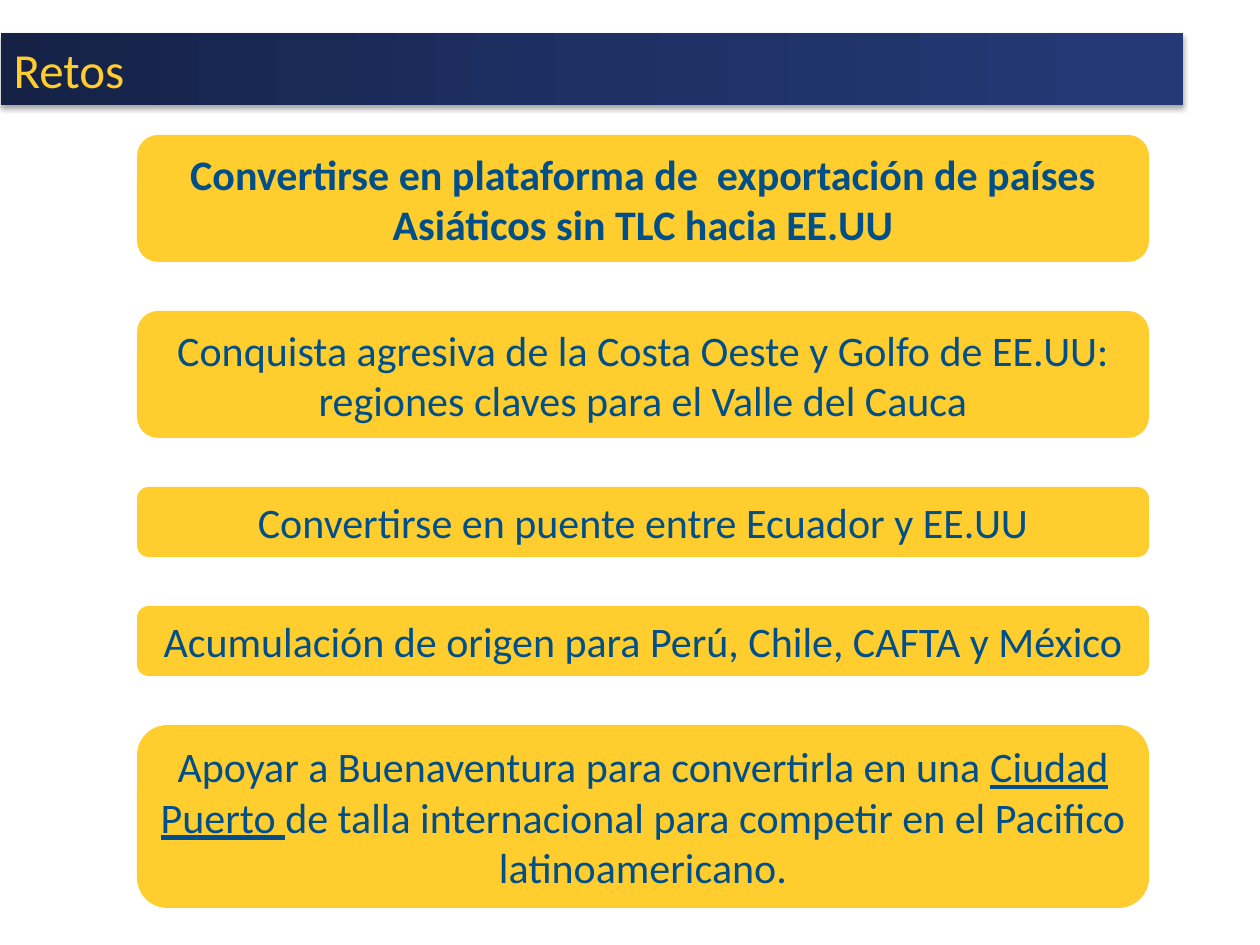
from copy import deepcopy
from dataclasses import dataclass

from lxml import etree
from pptx import Presentation
from pptx.dml.color import RGBColor
from pptx.enum.shapes import MSO_SHAPE
from pptx.enum.text import MSO_ANCHOR, MSO_AUTO_SIZE, PP_ALIGN
from pptx.oxml.ns import qn
from pptx.util import Emu, Pt

ROUNDED = MSO_SHAPE.ROUNDED_RECTANGLE
MIDDLE = MSO_ANCHOR.MIDDLE
NO_FIT, GROW = MSO_AUTO_SIZE.NONE, MSO_AUTO_SIZE.SHAPE_TO_FIT_TEXT
LEFT, CENTER = PP_ALIGN.LEFT, PP_ALIGN.CENTER
TITLE_ONLY = 5
PX = 914400 / 126


@dataclass(frozen=True)
class Theme:
    font: str = "Calibri"
    yellow: str = "FFCD2D"
    blue: str = "004F89"
    band: tuple = ("152246", "1E3064", "243976")
    shadow: str = "000000"
    title_size: int = 28
    body_size: int = 24


THEME = Theme()

# Each challenge: height in px, bold, and its (text, underlined) spans
CHALLENGES = [
    (127, True, [("Convertirse en plataforma de  exportación de países "
                  "Asiáticos sin TLC hacia EE.UU", False)]),
    (127, False, [("Conquista agresiva de la Costa Oeste y Golfo de EE.UU: "
                   "regiones claves para el Valle del Cauca", False)]),
    (70, False, [("Convertirse en puente entre Ecuador y EE.UU", False)]),
    (70, False, [("Acumulación de origen para Perú, Chile, CAFTA y México", False)]),
    (183, False, [("Apoyar a Buenaventura para convertirla en una ", False),
                  ("Ciudad Puerto ", True),
                  ("de talla internacional para competir en el Pacifico "
                   "latinoamericano.", False)]),
]


def px(length):
    return Emu(round(length * PX))


def add_span(para, text, size, color, bold=False, underline=False):
    span = para.add_run()
    span.text = text
    font = span.font
    font.name, font.size = THEME.font, Pt(size)
    font.bold, font.underline = bold, underline
    font.color.rgb = RGBColor.from_string(color)


def fill_gradient(shape, colors):
    """Fill from left to right with three evenly spaced colours."""
    shape.fill.gradient()
    shape.fill.gradient_angle = 0
    first = shape.element.spPr.find(".//" + qn("a:gs"))
    first.addnext(deepcopy(first))
    for index, (stop, color) in enumerate(zip(shape.fill.gradient_stops, colors)):
        stop.position = index / 2
        stop.color.rgb = RGBColor.from_string(color)


def add_drop_shadow(shape):
    effects = etree.SubElement(shape.element.spPr, qn("a:effectLst"))
    shadow = etree.SubElement(effects, qn("a:outerShdw"), blurRad=str(Pt(3)),
                              dist=str(Pt(2)), dir="5400000", rotWithShape="0")
    color = etree.SubElement(shadow, qn("a:srgbClr"), val=THEME.shadow)
    etree.SubElement(color, qn("a:alpha"), val="35000")


def place_title(page, left, top, width, height, text):
    band = page.shapes.title
    band.left, band.top, band.width, band.height = map(px, (left, top, width, height))
    fill_gradient(band, THEME.band)
    band.line.fill.background()
    add_drop_shadow(band)
    frame = band.text_frame
    frame.auto_size, frame.vertical_anchor = NO_FIT, MIDDLE
    para = frame.paragraphs[0]
    para.alignment = LEFT
    add_span(para, text, THEME.title_size, THEME.yellow)


def add_challenge(page, left, top, width, height, bold, spans):
    box = page.shapes.add_shape(ROUNDED, *map(px, (left, top, width, height)))
    box.shadow.inherit = False
    box.fill.solid()
    box.fill.fore_color.rgb = RGBColor.from_string(THEME.yellow)
    box.line.fill.background()
    frame = box.text_frame
    frame.word_wrap, frame.auto_size = True, GROW
    frame.vertical_anchor = MIDDLE
    para = frame.paragraphs[0]
    para.alignment = CENTER
    for text, underline in spans:
        add_span(para, text, THEME.body_size, THEME.blue, bold, underline)


def add_challenges(page, left, top, width, gap):
    for height, bold, spans in CHALLENGES:
        add_challenge(page, left, top, width, height, bold, spans)
        top += height + gap


def main():
    deck = Presentation()
    deck.slide_width, deck.slide_height = px(1260), px(945)
    page = deck.slides.add_slide(deck.slide_layouts[TITLE_ONLY])
    place_title(page, 1, 33, 1182, 72, "Retos")
    add_challenges(page, left=137, top=135, width=1012, gap=49)
    deck.save("out.pptx")


if __name__ == "__main__":
    main()
